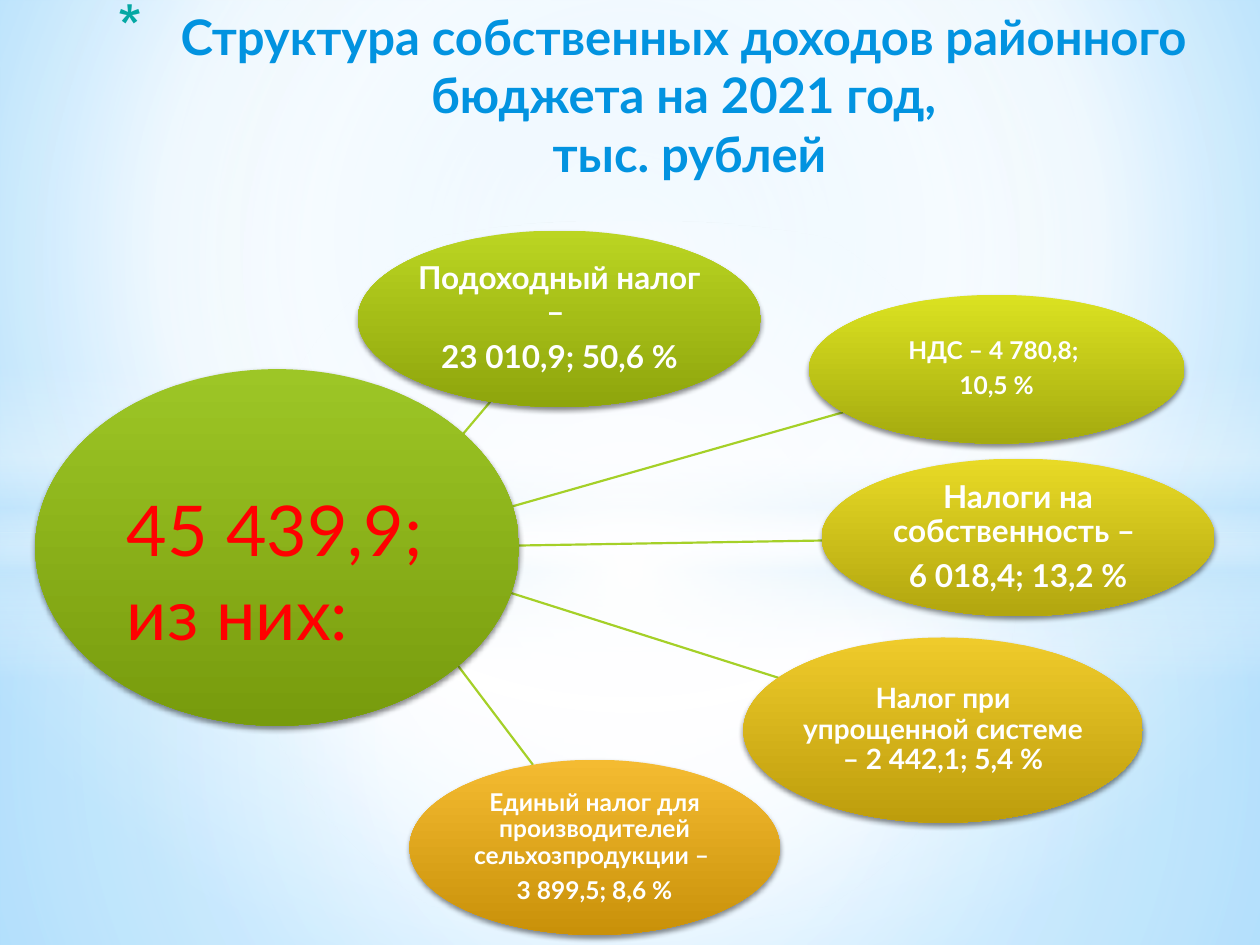
from lxml.etree import SubElement
from pptx import Presentation
from pptx.dml.color import RGBColor
from pptx.enum.shapes import MSO_CONNECTOR, MSO_SHAPE
from pptx.enum.text import MSO_ANCHOR, PP_ALIGN
from pptx.oxml import parse_xml
from pptx.oxml.ns import nsdecls, qn
from pptx.util import Inches, Pt

FONT = "Lato"
WHITE = RGBColor(0xFF, 0xFF, 0xFF)
SKY = RGBColor(0xB0, 0xE0, 0xFF)
BLUE = RGBColor(0x6B, 0xC5, 0xFF)
HAZE = RGBColor(0xC6, 0xE7, 0xFC)
HEAD = RGBColor(0x02, 0x93, 0xE0)
TEAL = RGBColor(0x04, 0xA8, 0xA4)
GREEN = RGBColor(0xA5, 0xD0, 0x28)
RED = RGBColor(0xFF, 0x00, 0x00)
MID = (50, 50, 50, 50)


def blend(fill, props, stops, focus=None):
    """Fill with (position, colour, opacity) stops, top down or round a focus box."""
    fill.background()
    marks = "".join(
        f'<a:gs pos="{pos * 1000}"><a:srgbClr val="{color}">'
        f'<a:alpha val="{alpha * 1000}"/></a:srgbClr></a:gs>'
        for pos, color, alpha in stops)
    if focus:
        sides = " ".join(f'{side}="{n * 1000}"' for side, n in zip("ltrb", focus))
        shade = f'<a:path path="circle"><a:fillToRect {sides}/></a:path>'
    else:
        shade = '<a:lin ang="5400000" scaled="0"/>'
    grad = parse_xml(f'<a:gradFill {nsdecls("a")} rotWithShape="1">'
                     f'<a:gsLst>{marks}</a:gsLst>{shade}</a:gradFill>')
    props.replace(props.find(qn("a:noFill")), grad)


def write(par, text, size, color, bold=False):
    run = par.add_run()
    run.text = text
    run.font.name = FONT
    run.font.size = Pt(size)
    run.font.bold = bold
    run.font.color.rgb = color


prs = Presentation()
prs.slide_width, prs.slide_height = Inches(10), Inches(7.5)
slide = prs.slides.add_slide(prs.slide_layouts[6])
shapes = slide.shapes

# Backdrop
back = slide.background.fill
blend(back, slide.element.cSld.bg.bgPr,
      [(0, SKY, 100), (60, WHITE, 100), (100, BLUE, 100)], (20, 10, 20, 60))
layers = [
    (MSO_SHAPE.RECTANGLE, 4.23, 3.27,
     [(0, WHITE, 91), (37, WHITE, 76), (100, HAZE, 79)], MID),
    (MSO_SHAPE.RECTANGLE, 0, 4.23,
     [(0, WHITE, 89), (48, WHITE, 62), (100, HAZE, 79)], MID),
    (MSO_SHAPE.RECTANGLE, 2.9, 2.5,
     [(0, WHITE, 0), (29, WHITE, 30), (45, HAZE, 40),
      (55, WHITE, 26), (65, HAZE, 60), (100, WHITE, 0)], None),
    (MSO_SHAPE.OVAL, 1.75, 5.58, [(0, WHITE, 100), (54, WHITE, 0)], MID),
]
for kind, top, height, stops, focus in layers:
    layer = shapes.add_shape(kind, 0, Inches(top), Inches(10), Inches(height))
    layer.shadow.inherit = False
    layer.line.fill.background()
    blend(layer.fill, layer.element.spPr, stops, focus)

# Title with an asterisk bullet
title = shapes.add_textbox(Inches(0.51), 0, Inches(9.13), Inches(1.96))
title.text_frame.word_wrap = True
par = title.text_frame.paragraphs[0]
par.alignment = PP_ALIGN.CENTER
write(par, "Структура собственных доходов районного бюджета на 2021 год,", 28, HEAD, True)
par.add_line_break()
write(par, " тыс. рублей", 28, HEAD, True)
props = par._p.get_or_add_pPr()
props.set("marL", str(Inches(0.7)))
props.set("indent", str(Inches(-0.5)))
tint = SubElement(props, qn("a:buClr"))
SubElement(tint, qn("a:srgbClr"), val=str(TEAL))
SubElement(props, qn("a:buSzPct"), val="128000")
SubElement(props, qn("a:buChar"), char="*")

# Spokes from the total to each tax
spokes = [
    (3.36, 4.92, 4.23, 6.07),
    (3.5, 4.53, 6.18, 5.38),
    (3.5, 4.34, 6.53, 4.29),
    (3.5, 4.18, 6.7, 3.27),
    (3.4, 3.77, 3.89, 3.19),
]
for ends in spokes:
    spoke = shapes.add_connector(MSO_CONNECTOR.STRAIGHT, *map(Inches, ends))
    spoke.line.color.rgb = GREEN
    spoke.line.width = Pt(1.25)
    SubElement(spoke.element.spPr, qn("a:effectLst"))

# Total and taxes: place, top and bottom colour, text size, lines
ovals = [
    ((0.28, 2.93, 3.84, 2.83), "9DC626", "779B0D", 0, []),
    ((2.84, 1.83, 3.2, 1.4), "BBD522", "8EA50C", 18,
     ["Подоходный налог – ", "23 010,9; 50,6 %"]),
    ((6.42, 2.34, 2.98, 1.18), "DBE221", "A4AA0F", 14,
     ["НДС – 4 780,8; ", "10,5 %"]),
    ((6.52, 3.64, 3.12, 1.25), "E8DA26", "B2A60F", 18,
     ["Налоги на собственность – ", "6 018,4; 13,2 %"]),
    ((5.9, 5.06, 3.17, 1.47), "EFCB2B", "BD9D0C", 16,
     ["Налог при упрощенной системе – 2 442,1; 5,4 %"]),
    ((3.25, 6.03, 2.94, 1.39), "F4BB31", "C99109", 14,
     ["Единый налог для производителей сельхозпродукции – ", "3 899,5; 8,6 %"]),
]
for place, light, dark, size, lines in ovals:
    oval = shapes.add_shape(MSO_SHAPE.OVAL, *map(Inches, place))
    oval.line.fill.background()
    blend(oval.fill, oval.element.spPr, [(0, light, 100), (100, dark, 100)])
    oval.shadow.inherit = False
    glow = SubElement(oval.element.spPr.find(qn("a:effectLst")), qn("a:outerShdw"),
                      blurRad=str(Pt(3.1)), dist=str(Pt(1.8)), dir="5400000",
                      rotWithShape="0")
    black = SubElement(glow, qn("a:srgbClr"), val="000000")
    SubElement(black, qn("a:alpha"), val="45000")
    frame = oval.text_frame
    frame.word_wrap = True
    frame.vertical_anchor = MSO_ANCHOR.MIDDLE
    frame.margin_left = frame.margin_right = Inches(0.01)
    frame.margin_top = frame.margin_bottom = Inches(0.01)
    for i, line in enumerate(lines):
        par = frame.add_paragraph() if i else frame.paragraphs[0]
        par.alignment = PP_ALIGN.CENTER
        par.line_spacing = 0.9
        par.space_after = Pt(size * 0.35)
        write(par, line, size, WHITE, True)

total = shapes.add_textbox(Inches(0.91), Inches(3.81), Inches(2.6), Inches(1.45))
frame = total.text_frame
frame.word_wrap = True
write(frame.paragraphs[0], "45 439,9;", 40, RED)
write(frame.add_paragraph(), "из них:", 40, RED)

prs.save("out.pptx")
